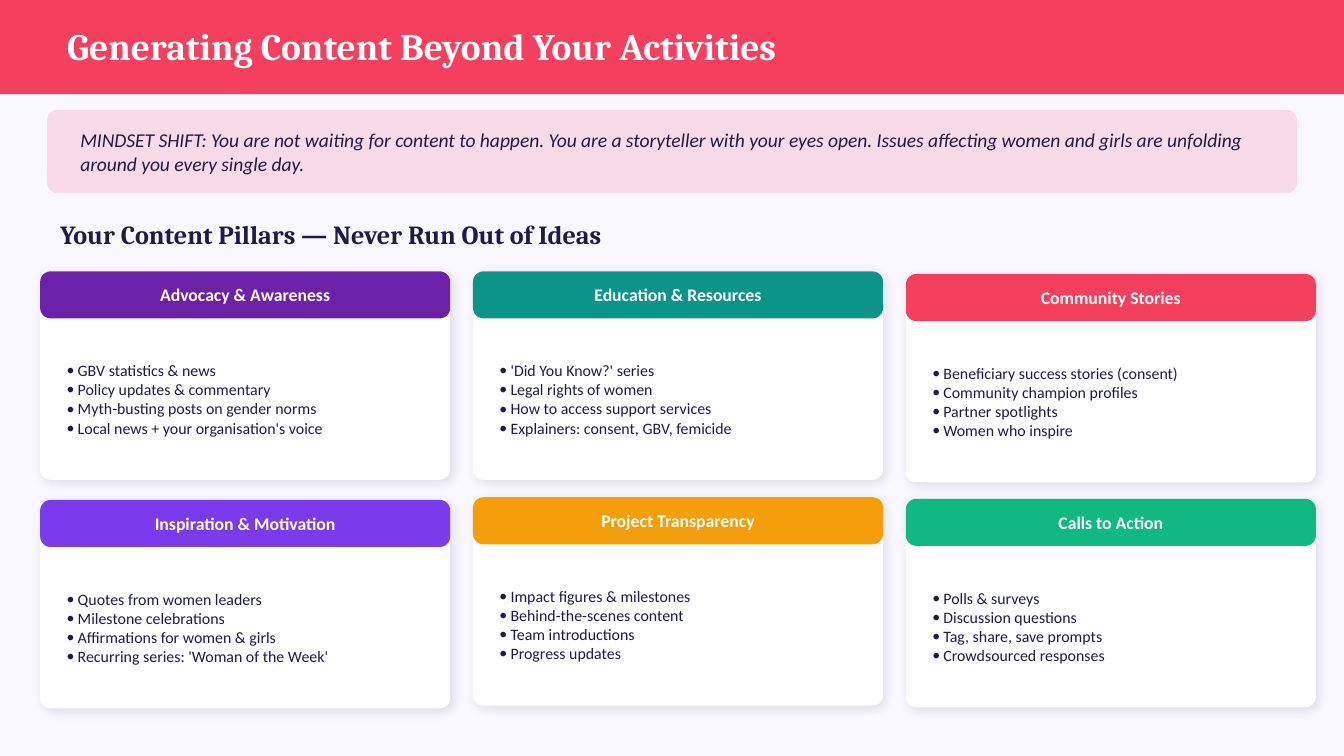
from collections import namedtuple
from dataclasses import dataclass

from lxml.etree import SubElement
from pptx import Presentation
from pptx.dml.color import RGBColor
from pptx.enum.shapes import MSO_SHAPE as Preset
from pptx.enum.text import MSO_ANCHOR as Anchor, MSO_AUTO_SIZE as AutoSize, PP_ALIGN as Align
from pptx.oxml.ns import qn
from pptx.util import Cm, Pt

Box = namedtuple("Box", "left top width height")
Pillar = namedtuple("Pillar", "top color heading ideas")


@dataclass(frozen=True)
class Theme:
    background: str = "F9F7FF"
    accent: str = "F43F5E"
    ink: str = "1E1B4B"
    white: str = "FFFFFF"
    shadow: str = "000000"
    display_font: str = "Cambria"
    body_font: str = "Calibri"
    title_size: float = 20
    section_size: float = 14
    mindset_size: float = 10.5
    heading_size: float = 9.5
    ideas_size: float = 8.5
    radius: float = 0.2
    padding: float = 0.25


THEME = Theme()

PILLARS = [
    Pillar(5.13, "6B21A8", "Advocacy & Awareness", [
        "GBV statistics & news", "Policy updates & commentary",
        "Myth-busting posts on gender norms", "Local news + your organisation's voice"]),
    Pillar(5.13, "0D9488", "Education & Resources", [
        "'Did You Know?' series", "Legal rights of women",
        "How to access support services", "Explainers: consent, GBV, femicide"]),
    Pillar(5.18, THEME.accent, "Community Stories", [
        "Beneficiary success stories (consent)", "Community champion profiles",
        "Partner spotlights", "Women who inspire"]),
    Pillar(9.45, "7C3AED", "Inspiration & Motivation", [
        "Quotes from women leaders", "Milestone celebrations",
        "Affirmations for women & girls", "Recurring series: 'Woman of the Week'"]),
    Pillar(9.4, "F59E0B", "Project Transparency", [
        "Impact figures & milestones", "Behind-the-scenes content",
        "Team introductions", "Progress updates"]),
    Pillar(9.43, "10B981", "Calls to Action", [
        "Polls & surveys", "Discussion questions",
        "Tag, share, save prompts", "Crowdsourced responses"]),
]


def rgb(color):
    return RGBColor.from_string(color)


def lengths(box):
    return [Cm(length) for length in box]


def add_bullet(paragraph, indent=0.21):
    properties = paragraph._p.get_or_add_pPr()
    properties.set("marL", str(Cm(indent)))
    properties.set("indent", str(-Cm(indent)))
    SubElement(properties, qn("a:buFont"), typeface=THEME.body_font)
    SubElement(properties, qn("a:buChar"), char="•")


def write(shape, *lines, size, color=THEME.ink, font=THEME.body_font, bold=False,
          italic=False, align=Align.LEFT, insets=(0, 0, 0, 0), bullets=False):
    frame = shape.text_frame
    frame.word_wrap = True
    frame.auto_size = AutoSize.NONE
    frame.vertical_anchor = Anchor.MIDDLE
    frame.margin_left, frame.margin_top, frame.margin_right, frame.margin_bottom = lengths(insets)
    for number, line in enumerate(lines):
        paragraph = frame.add_paragraph() if number else frame.paragraphs[0]
        paragraph.alignment = align
        if bullets:
            add_bullet(paragraph)
        run = paragraph.add_run()
        run.text = line
        run.font.name, run.font.size = font, Pt(size)
        run.font.bold, run.font.italic = bold, italic
        run.font.color.rgb = rgb(color)


def add_panel(slide, box, color, opacity=None):
    panel = slide.shapes.add_shape(Preset.ROUNDED_RECTANGLE, *lengths(box))
    panel.adjustments[0] = THEME.radius / min(box.width, box.height)
    panel.fill.solid()
    panel.fill.fore_color.rgb = rgb(color)
    panel.line.fill.background()
    panel.shadow.inherit = False
    if opacity is not None:
        tint = panel._element.spPr.find(f"{qn('a:solidFill')}/{qn('a:srgbClr')}")
        SubElement(tint, qn("a:alpha"), val=str(opacity * 1000))
    return panel


def cast_shadow(panel):
    effects = panel._element.spPr.find(qn("a:effectLst"))
    outer = SubElement(effects, qn("a:outerShdw"), blurRad=str(Pt(6)), dist=str(Pt(2)),
                       dir=str(45 * 60000), algn="bl", rotWithShape="0")
    shade = SubElement(outer, qn("a:srgbClr"), val=THEME.shadow)
    SubElement(shade, qn("a:alpha"), val="10000")


def place_title(slide, box):
    title = slide.shapes.title
    title.left, title.top, title.width, title.height = lengths(box)
    title.fill.solid()
    title.fill.fore_color.rgb = rgb(THEME.accent)
    write(title, "Generating Content Beyond Your Activities", size=THEME.title_size,
          color=THEME.white, font=THEME.display_font, bold=True, insets=(1.27, 0, 1.27, 0.04))


def place_mindset(slide, box):
    mindset = add_panel(slide, box, THEME.accent, opacity=15)
    write(mindset, "MINDSET SHIFT: You are not waiting for content to happen. You are a "
          "storyteller with your eyes open. Issues affecting women and girls are unfolding "
          "around you every single day.",
          size=THEME.mindset_size, italic=True, insets=(0.57, 0, 0.57, 0))


def place_section_heading(slide, box):
    heading = slide.shapes.add_textbox(*lengths(box))
    write(heading, "Your Content Pillars — Never Run Out of Ideas", size=THEME.section_size,
          font=THEME.display_font, bold=True, insets=(THEME.padding, 0, THEME.padding, 0))


def place_pillar(slide, box, pillar):
    heading_height, gap, pad = 0.89, 0.13, THEME.padding
    cast_shadow(add_panel(slide, box, THEME.white))
    heading = add_panel(slide, box._replace(height=heading_height), pillar.color)
    write(heading, pillar.heading, size=THEME.heading_size, color=THEME.white,
          bold=True, align=Align.CENTER)
    ideas_box = Box(box.left + pad, box.top + heading_height + gap,
                    box.width - 2 * pad, box.height - heading_height - 2 * gap)
    ideas = slide.shapes.add_textbox(*lengths(ideas_box))
    write(ideas, *pillar.ideas, size=THEME.ideas_size, bullets=True,
          insets=(pad, gap, pad, gap))


def place_pillars(slide, left, width, height, gap, columns=3):
    for number, pillar in enumerate(PILLARS):
        card_left = left + number % columns * (width + gap)
        place_pillar(slide, Box(card_left, pillar.top, width, height), pillar)


def main():
    deck = Presentation()
    deck.slide_width, deck.slide_height = Cm(25.4), Cm(14.29)
    slide = deck.slides.add_slide(deck.slide_layouts[5])
    slide.background.fill.solid()
    slide.background.fill.fore_color.rgb = rgb(THEME.background)
    place_title(slide, Box(0, 0, 25.4, 1.78))
    place_mindset(slide, Box(0.89, 2.08, 23.62, 1.57))
    place_section_heading(slide, Box(0.89, 3.94, 23.62, 0.97))
    place_pillars(slide, left=0.76, width=7.75, height=3.94, gap=0.43)
    deck.save("out.pptx")


if __name__ == "__main__":
    main()
